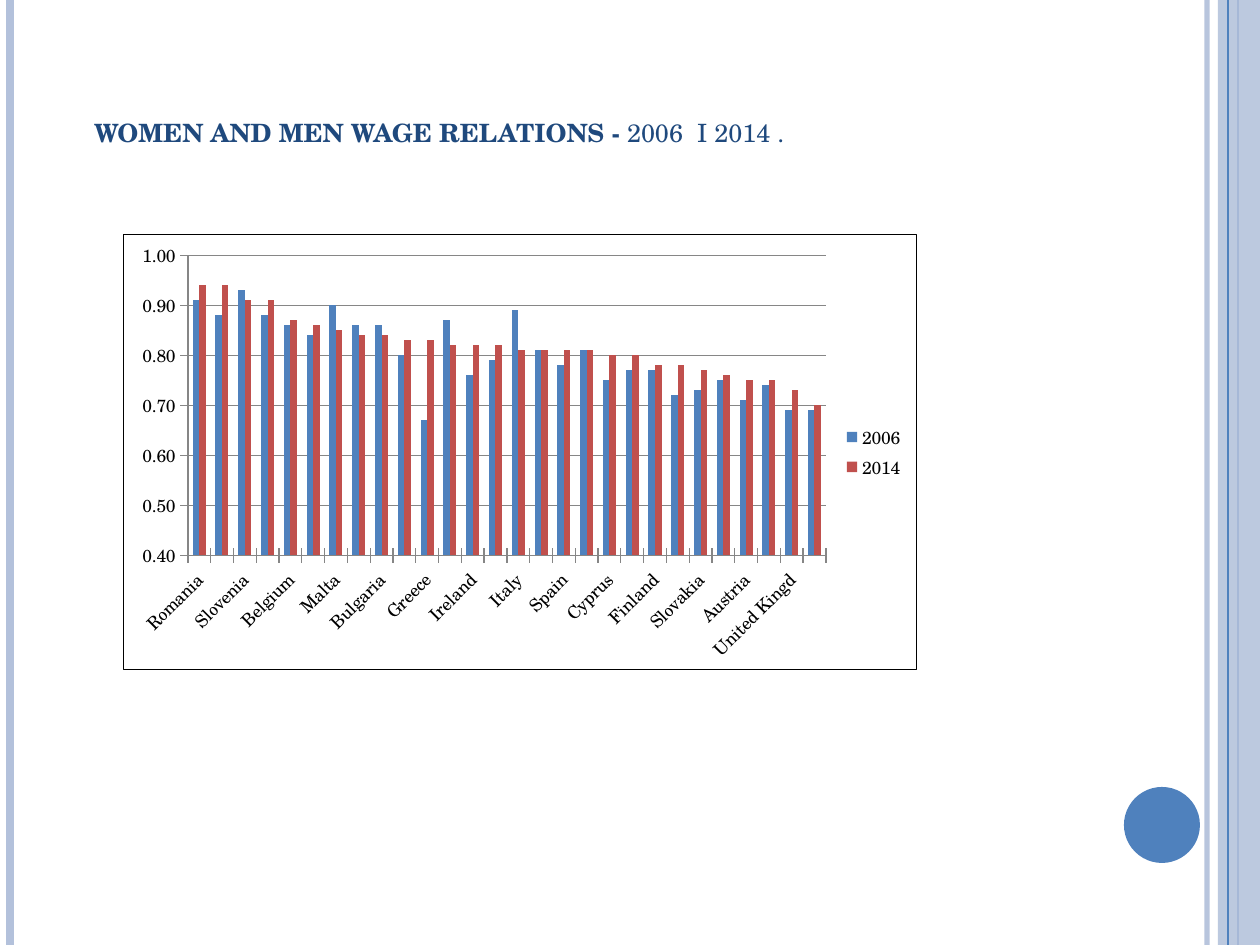
from dataclasses import dataclass

from lxml import etree
from pptx import Presentation
from pptx import util as u
from pptx.chart.data import CategoryChartData
from pptx.dml.color import RGBColor
from pptx.enum import chart as ch, shapes, text
from pptx.oxml import parse_xml
from pptx.oxml.ns import nsdecls, qn


@dataclass(frozen=True)
class Theme:
    font: str = "TeX Gyre Schola"
    title: str = "1F497D"
    accent: str = "4F81BD"
    second: str = "C0504D"
    pale: str = "B3C1DB"
    grid: str = "868686"
    ink: str = "000000"
    paper: str = "FFFFFF"
    title_pt: int = 18
    chart_pt: int = 10


T = Theme()
W, H = 1260, 945

TITLE_BOX = (74, 37, 1029, 118)
TITLE = [("women and men wage relations -", True), (" 2006  i 2014 .", False)]

# x, colour, width in points, opacity in percent
RULES_BEHIND = [(1207, T.pale, 3, 93), (10, T.pale, 4.5, 100), (1238, T.accent, 1.5, 100)]
BAND = (1218, 0, 42, H)
BAND_OPACITY = 87
RULE_FRONT = (1228, T.accent, 0.75, 100)
DISC = (1124, 787, 76, 76)

CHART_BOX = (123, 234, 794, 436)
PLOT_BOX = (187, 255, 639, 301)
YEARS = [("2006", T.accent), ("2014", T.second)]
WAGES = [
    ("Romania", 0.91, 0.94), ("Luxembourg", 0.88, 0.94), ("Slovenia", 0.93, 0.91),
    ("Croatia", 0.88, 0.91), ("Belgium", 0.86, 0.87), ("Sweden", 0.84, 0.86),
    ("Malta", 0.90, 0.85), ("Hungary", 0.86, 0.84), ("Bulgaria", 0.86, 0.84),
    ("Poland", 0.80, 0.83), ("Greece", 0.67, 0.83), ("Portugal", 0.87, 0.82),
    ("Ireland", 0.76, 0.82), ("Lithuania", 0.79, 0.82), ("Italy", 0.89, 0.81),
    ("Latvia", 0.81, 0.81), ("Spain", 0.78, 0.81), ("France", 0.81, 0.81),
    ("Cyprus", 0.75, 0.80), ("Denmark", 0.77, 0.80), ("Finland", 0.77, 0.78),
    ("Netherlands", 0.72, 0.78), ("Slovakia", 0.73, 0.77), ("Germany", 0.75, 0.76),
    ("Austria", 0.71, 0.75), ("Czechia", 0.74, 0.75), ("United Kingd", 0.69, 0.73),
    ("Estonia", 0.69, 0.70),
]


def px(n):
    return u.Emu(round(n * 914400 / 126))


def box(b):
    return [px(n) for n in b]


def rgb(c):
    return RGBColor.from_string(c)


def set_opacity(element, percent):
    color = element.find(".//" + qn("a:srgbClr"))
    etree.SubElement(color, qn("a:alpha")).set("val", str(percent * 1000))


def add_rule(s, x, color, width, opacity):
    c = s.shapes.add_connector(shapes.MSO_CONNECTOR.STRAIGHT, px(x), 0, px(x), px(H))
    c.line.color.rgb = rgb(color)
    c.line.width = u.Pt(width)
    if opacity < 100:
        set_opacity(c.line._get_or_add_ln(), opacity)
    etree.SubElement(c._element.spPr, qn("a:effectLst"))


def add_plain(s, kind, b, color):
    sp = s.shapes.add_shape(kind, *box(b))
    sp.shadow.inherit = False
    sp.fill.solid()
    sp.fill.fore_color.rgb = rgb(color)
    sp.line.fill.background()
    return sp


def add_title(s):
    sp = s.shapes.title
    sp.left, sp.top, sp.width, sp.height = box(TITLE_BOX)
    tf = sp.text_frame
    tf.auto_size = text.MSO_AUTO_SIZE.NONE
    tf.vertical_anchor = text.MSO_ANCHOR.BOTTOM
    tf.margin_left = px(20)
    p = tf.paragraphs[0]
    p.alignment = text.PP_ALIGN.LEFT
    p.font.name, p.font.size = T.font, u.Pt(T.title_pt)
    p.font.color.rgb = rgb(T.title)
    for words, bold in TITLE:
        r = p.add_run()
        r.text = words
        r.font.bold = bold
        r.font.name, r.font.size = T.font, u.Pt(T.title_pt)
        r.font.color.rgb = rgb(T.title)
        r._r.get_or_add_rPr().set("cap", "small")


def frame_chart(chart):
    """Give the chart a white ground, a thin border and a fixed plot area."""
    space = chart._chartSpace
    space.find(qn("c:chart")).addnext(parse_xml(
        f'<c:spPr {nsdecls("c", "a")}>'
        f'<a:solidFill><a:srgbClr val="{T.paper}"/></a:solidFill>'
        f'<a:ln w="9525"><a:solidFill><a:srgbClr val="{T.ink}"/></a:solidFill></a:ln></c:spPr>'))
    cx, cy, cw, chh = CHART_BOX
    x, y, w, h = PLOT_BOX
    parts = {"x": (x - cx) / cw, "y": (y - cy) / chh, "w": w / cw, "h": h / chh}
    values = "".join(f'<c:{k} val="{v:.3f}"/>' for k, v in parts.items())
    area = space.find(".//" + qn("c:plotArea"))
    for old in area.findall(qn("c:layout")):
        area.remove(old)
    area.insert(0, parse_xml(
        f'<c:layout {nsdecls("c")}><c:manualLayout><c:layoutTarget val="inner"/>'
        f'<c:xMode val="edge"/><c:yMode val="edge"/>{values}</c:manualLayout></c:layout>'))


def add_wage_chart(s):
    data = CategoryChartData(number_format="0.00")
    data.categories = [row[0] for row in WAGES]
    for i, (year, _) in enumerate(YEARS, 1):
        data.add_series(year, [row[i] for row in WAGES])
    chart = s.shapes.add_chart(ch.XL_CHART_TYPE.COLUMN_CLUSTERED, *box(CHART_BOX), data).chart
    chart.has_title = False
    chart.font.name, chart.font.size = T.font, u.Pt(T.chart_pt)
    chart.font.color.rgb = rgb(T.ink)
    chart.has_legend = True
    chart.legend.position = ch.XL_LEGEND_POSITION.RIGHT
    chart.legend.include_in_layout = False

    plot = chart.plots[0]
    plot.vary_by_categories = False
    plot.gap_width, plot.overlap = 150, 0
    for series, (_, color) in zip(plot.series, YEARS):
        series.format.fill.solid()
        series.format.fill.fore_color.rgb = rgb(color)

    cat, val = chart.category_axis, chart.value_axis
    val.minimum_scale, val.maximum_scale, val.major_unit = 0.4, 1, 0.1
    val.has_major_gridlines = True
    val.tick_labels.number_format = "0.00"
    val.tick_labels.number_format_is_linked = False
    for axis in (cat, val):
        axis.major_tick_mark = ch.XL_TICK_MARK.CROSS
    for lines in (cat.format.line, val.format.line, val.major_gridlines.format.line):
        lines.color.rgb = rgb(T.grid)
        lines.width = u.Pt(0.75)

    font = cat.tick_labels.font
    font.name, font.size = T.font, u.Pt(T.chart_pt)
    font.color.rgb = rgb(T.ink)
    cat._element.find(".//" + qn("a:bodyPr")).set("rot", "-2700000")
    skip = parse_xml(f'<c:tickLblSkip {nsdecls("c")} val="2"/>')
    cat._element.find(qn("c:noMultiLvlLbl")).addprevious(skip)
    frame_chart(chart)


def main():
    prs = Presentation()
    prs.slide_width, prs.slide_height = px(W), px(H)
    s = prs.slides.add_slide(prs.slide_layouts[5])
    for rule in RULES_BEHIND:
        add_rule(s, *rule)
    band = add_plain(s, shapes.MSO_SHAPE.RECTANGLE, BAND, T.pale)
    set_opacity(band._element.spPr, BAND_OPACITY)
    add_rule(s, *RULE_FRONT)
    add_plain(s, shapes.MSO_SHAPE.OVAL, DISC, T.accent)
    add_title(s)
    add_wage_chart(s)
    prs.save("out.pptx")


if __name__ == "__main__":
    main()
